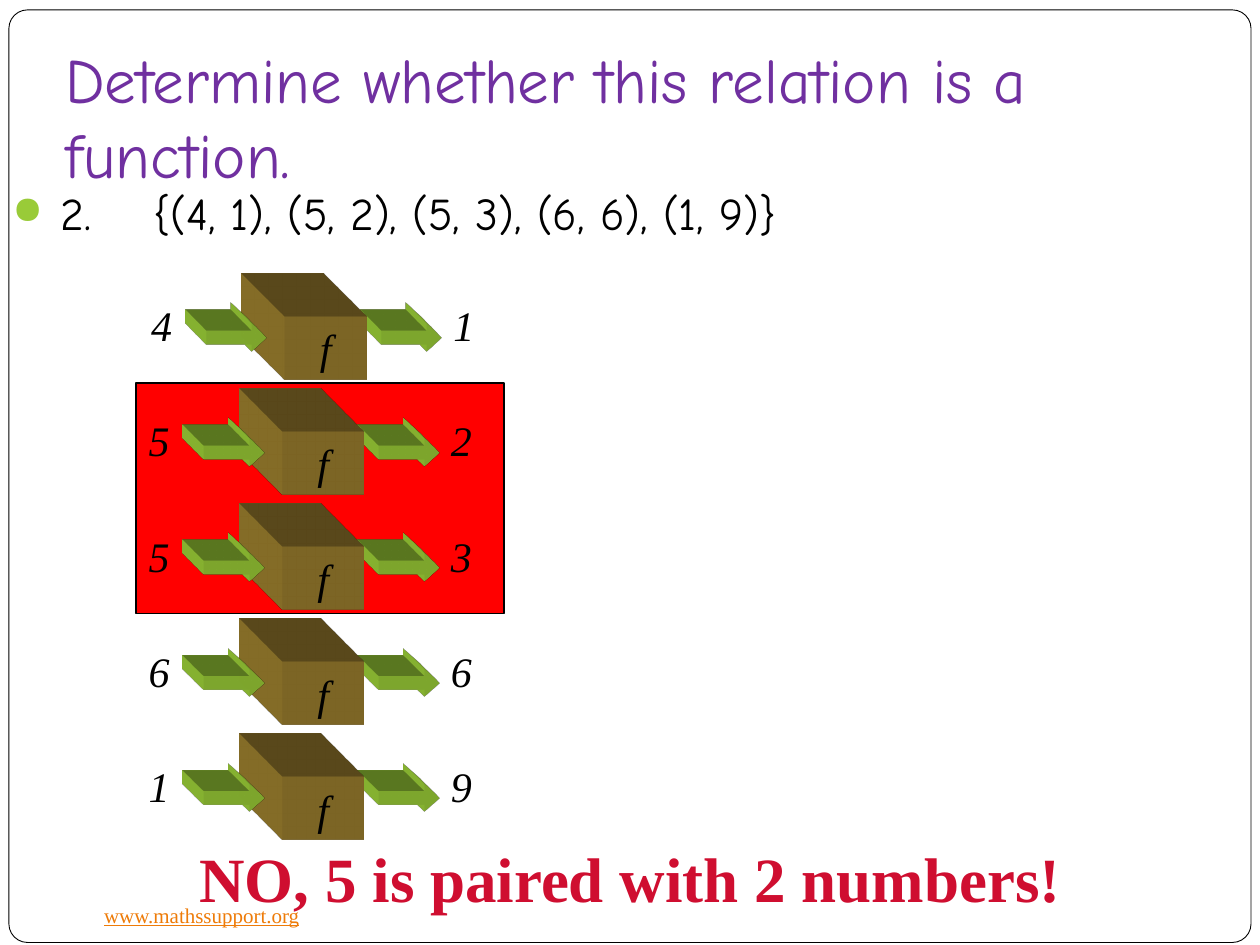
from lxml import etree
from pptx import Presentation
from pptx import util as u
from pptx.dml.color import RGBColor
from pptx.enum import shapes, text
from pptx.oxml import parse_xml
from pptx.oxml.ns import nsdecls, qn

BLACK = RGBColor(0, 0, 0)
WHITE = RGBColor(255, 255, 255)
RED = RGBColor(255, 0, 0)
CRIMSON = RGBColor(0xCF, 0x0E, 0x30)
PURPLE = RGBColor(0x70, 0x30, 0xA0)
ORANGE = RGBColor(0xEE, 0x7B, 0x08)
GREEN = RGBColor(0x99, 0xCB, 0x38)
BROWN = RGBColor(0x97, 0x7B, 0x2D)

SERIF, HAND = "Times New Roman", "Comic Neue"
KIND = shapes.MSO_SHAPE
PAIRS = [("4", "1"), ("5", "2"), ("5", "3"), ("6", "6"), ("1", "9")]
FIRST_TOP, ROW_STEP = 5.92, 2.32


def write(box, words, font, size, color, align=None, bold=None, italic=None, wrap=True):
    """Fill a shape with one paragraph and return the paragraph."""
    frame = box.text_frame
    frame.word_wrap = wrap
    para = frame.paragraphs[0]
    para.text = words
    para.alignment = align
    style = para.font
    style.name, style.size = font, u.Pt(size)
    style.bold, style.italic = bold, italic
    style.color.rgb = color
    return para


def add_text(parent, place, words, *style, **options):
    box = parent.shapes.add_textbox(*map(u.Cm, place))
    return write(box, words, *style, **options)


def add_block(parent, kind, place, fill, line_width=None):
    block = parent.shapes.add_shape(kind, *map(u.Cm, place))
    block.shadow.inherit = False
    block.fill.solid()
    block.fill.fore_color.rgb = fill
    if line_width:
        block.line.color.rgb = BLACK
        block.line.width = u.Pt(line_width)
    else:
        block.line.fill.background()
    return block


def extrude(block, depth, color):
    """Give a block depth towards the top left."""
    scene = parse_xml(
        f'<a:scene3d {nsdecls("a")}><a:camera prst="legacyObliqueTopLeft"/>'
        '<a:lightRig rig="legacyFlat3" dir="b"/></a:scene3d>')
    solid = parse_xml(
        f'<a:sp3d {nsdecls("a")} extrusionH="{u.Cm(depth)}" prstMaterial="legacyMatte">'
        f'<a:extrusionClr><a:srgbClr val="{color}"/></a:extrusionClr></a:sp3d>')
    block._element.spPr.extend([scene, solid])


def add_arrow(group, left, top):
    arrow = add_block(group, KIND.RIGHT_ARROW, (left, top, 1.22, 0.56), GREEN)
    arrow.adjustments[1] = 0.55
    extrude(arrow, 1.2, GREEN)


def add_machine(page, left, top, value_in, value_out):
    """One function machine: input, arrow, box f, arrow, output."""
    group = page.shapes.add_group_shape()
    label = (SERIF, 24, BLACK, text.PP_ALIGN.CENTER)
    add_arrow(group, left + 4.9, top + 0.61)
    machine = add_block(group, KIND.RECTANGLE, (left + 2.95, top + 0.46, 1.65, 1.27), BROWN)
    extrude(machine, 2.46, BROWN)
    machine.text_frame.vertical_anchor = text.MSO_ANCHOR.MIDDLE
    write(machine, "f", *label, italic=True, wrap=False)
    add_text(group, (left, top, 0.94, 1.27), value_in, *label, italic=True, wrap=False)
    add_text(group, (left + 6.1, top, 0.91, 1.27), value_out, *label, italic=True)
    add_arrow(group, left + 1.37, top + 0.61)


def add_bullet(para, indent):
    props = para._p.get_or_add_pPr()
    props.set("marL", str(u.Cm(indent)))
    props.set("indent", str(-u.Cm(indent)))
    color = etree.SubElement(props, qn("a:buClr"))
    etree.SubElement(color, qn("a:srgbClr"), val=str(GREEN))
    etree.SubElement(props, qn("a:buSzPct"), val="85000")
    etree.SubElement(props, qn("a:buChar"), char="●")


def add_relation(page):
    box = page.shapes.add_textbox(u.Cm(0), u.Cm(3.61), u.Cm(25.4), u.Cm(2.11))
    add_bullet(box.text_frame.paragraphs[0], 0.97)
    write(box, "2.\t {(4, 1), (5, 2), (5, 3), (6, 6), (1, 9)}", HAND, 26, BLACK)


def main():
    deck = Presentation()
    deck.slide_width, deck.slide_height = u.Cm(25.4), u.Cm(19.05)
    page = deck.slides.add_slide(deck.slide_layouts[6])

    # Frame and footer
    frame = add_block(page, KIND.ROUNDED_RECTANGLE, (0.18, 0.2, 25.04, 18.8), WHITE, 0.5)
    frame.adjustments[0] = 0.02
    footer = add_text(page, (1.85, 18.06, 4.5, 0.76), "www.mathssupport.org",
                      SERIF, 12, ORANGE, wrap=False)
    footer.font.underline = True

    # Highlight behind the two pairs that share an input
    add_block(page, KIND.RECTANGLE, (2.74, 7.72, 7.42, 4.65), RED, 0.75)

    # Relation and its machines
    add_relation(page)
    for row, pair in enumerate(PAIRS):
        left = 2.74 if row else 2.79
        add_machine(page, left, FIRST_TOP + row * ROW_STEP, *pair)

    # Answer and title
    add_text(page, (0.64, 16.79, 24.13, 1.8), "NO, 5 is paired with 2 numbers!",
             SERIF, 36, CRIMSON, text.PP_ALIGN.CENTER, bold=True)
    add_text(page, (1.07, 0.69, 21.59, 3.18), "Determine whether this relation is a function.",
             HAND, 36, PURPLE)

    deck.save("out.pptx")


if __name__ == "__main__":
    main()
